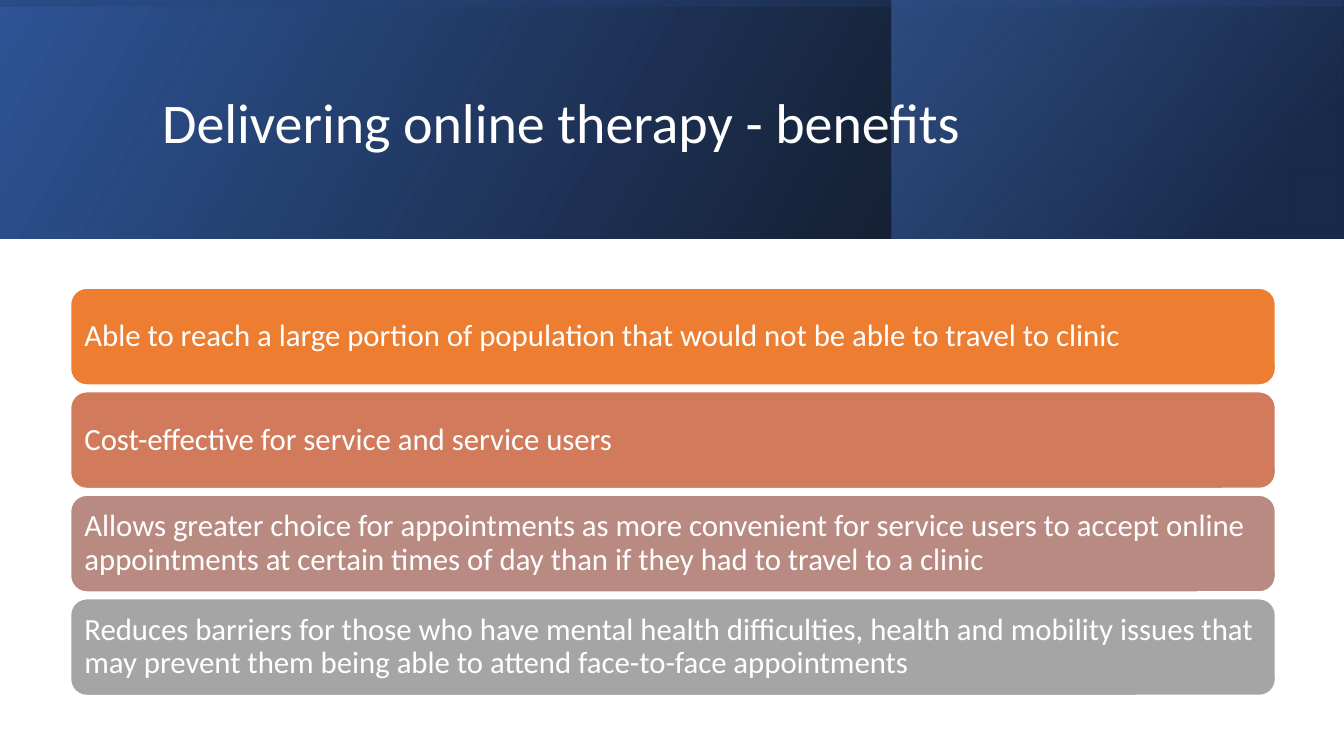
from dataclasses import dataclass

from lxml import etree
from pptx import Presentation
from pptx.dml.color import RGBColor
from pptx.enum.shapes import MSO_SHAPE as Shape
from pptx.enum.text import MSO_ANCHOR as Anchor, PP_ALIGN as Align
from pptx.oxml.ns import qn
from pptx.util import Inches, Pt


@dataclass(frozen=True)
class Theme:
    font: str = "Calibri"
    title_size: int = 40
    card_size: int = 22
    white: str = "FFFFFF"
    black: str = "000000"
    blue: str = "2F5597"
    navy: str = "203864"
    sky: str = "4472C4"
    cards: tuple = ("ED7D31", "D17B5C", "B98A82", "A5A5A5")


THEME = Theme()

BENEFITS = [
    "Able to reach a large portion of population that would not be able to travel to clinic",
    "Cost-effective for service and service users",
    "Allows greater choice for appointments as more convenient for service users to accept "
    "online appointments at certain times of day than if they had to travel to a clinic",
    "Reduces barriers for those who have mental health difficulties, health and mobility "
    "issues that may prevent them being able to attend face-to-face appointments",
]
CARD_TOP, CARD_LAST_TOP, CARD_HEIGHT = 2.86, 5.94, 0.96


def rgb(value):
    return RGBColor.from_string(value)


def add_gradient_panel(s, box, angle, stops, rotation=0):
    """Mirrored rectangle; stops are (position %, colour, opacity %)."""
    sp = s.shapes.add_shape(Shape.RECTANGLE, *map(Inches, box))
    sp.shadow.inherit = False
    sp.line.fill.background()
    sp.rotation = rotation
    sp_pr = sp._element.spPr
    sp_pr.xfrm.set("flipH", "1")

    sp.fill.gradient()
    sp.fill.gradient_angle = 360 - angle  # the setter counts anticlockwise
    for stop, (position, color, _) in zip(sp.fill.gradient_stops, stops):
        stop.position = position / 100
        stop.color.rgb = rgb(color)
    colors = sp_pr.find(qn("a:gradFill")).iter(qn("a:srgbClr"))
    for color, (_, _, opacity) in zip(list(colors), stops):
        etree.SubElement(color, qn("a:alpha")).set("val", str(opacity * 1000))


def write_text(sp, text, size, margin):
    tf = sp.text_frame
    tf.word_wrap = True
    tf.vertical_anchor = Anchor.MIDDLE
    tf.margin_left = tf.margin_right = Inches(margin)
    tf.margin_top = tf.margin_bottom = Inches(margin)
    p = tf.paragraphs[0]
    p.text = text
    p.alignment = Align.LEFT
    p.line_spacing = 0.9
    font = p.runs[0].font
    font.name, font.size = THEME.font, Pt(size)
    font.color.rgb = rgb(THEME.white)


def add_title(s, text):
    sp = s.shapes.add_textbox(Inches(1.51), Inches(0.38), Inches(10.63), Inches(1.72))
    write_text(sp, text, THEME.title_size, 0.1)


def add_card(s, top, text, color):
    sp = s.shapes.add_shape(Shape.ROUNDED_RECTANGLE, Inches(0.7), Inches(top),
                            Inches(11.95), Inches(CARD_HEIGHT))
    sp.shadow.inherit = False
    sp.fill.solid()
    sp.fill.fore_color.rgb = rgb(color)
    sp.line.color.rgb = rgb(THEME.white)
    sp.line.width = Pt(1)
    write_text(sp, text, THEME.card_size, 0.09)


def main():
    prs = Presentation()
    prs.slide_width, prs.slide_height = Inches(13.33), Inches(7.5)
    s = prs.slides.add_slide(prs.slide_layouts[6])

    # Header band: three layered gradients
    add_gradient_panel(s, (0, 0, 13.33, 2.37), 330,
                       [(0, THEME.black, 96), (100, THEME.blue, 100)])
    add_gradient_panel(s, (8.84, 0, 4.48, 2.37), 320,
                       [(19, THEME.navy, 68), (100, THEME.sky, 48)])
    add_gradient_panel(s, (5.48, -5.48, 2.37, 13.33), 350,
                       [(23, THEME.blue, 16), (99, THEME.black, 45)], rotation=270)
    add_title(s, "Delivering online therapy - benefits")

    # Benefit cards, evenly spaced
    pitch = (CARD_LAST_TOP - CARD_TOP) / (len(BENEFITS) - 1)
    for i, (text, color) in enumerate(zip(BENEFITS, THEME.cards)):
        add_card(s, CARD_TOP + i * pitch, text, color)

    prs.save("out.pptx")


if __name__ == "__main__":
    main()
